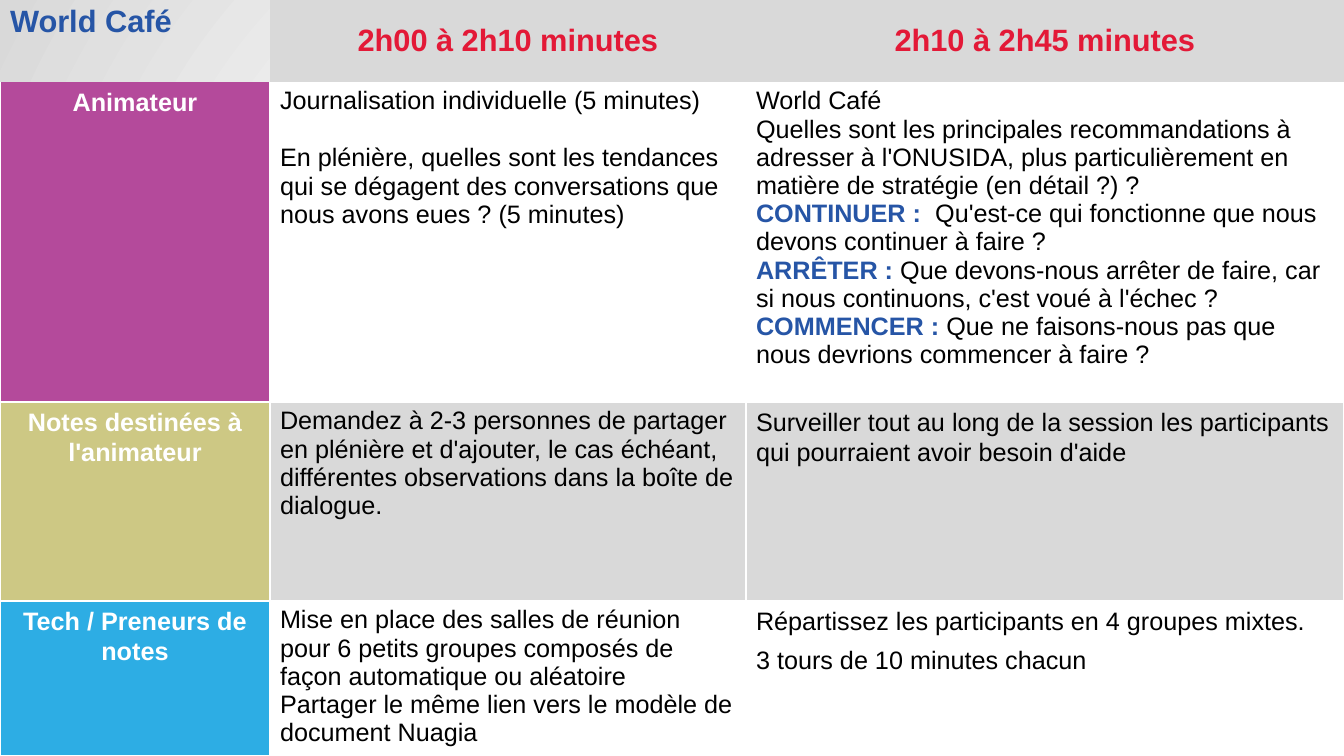
from dataclasses import dataclass

from lxml.etree import SubElement
from pptx import Presentation
from pptx.dml.color import RGBColor
from pptx.enum.text import MSO_ANCHOR, PP_ALIGN
from pptx.oxml import parse_xml
from pptx.oxml.ns import nsdecls, qn
from pptx.slide import Slide
from pptx.table import _Cell
from pptx.text.text import _Paragraph
from pptx.util import Emu, Pt


@dataclass(frozen=True)
class Theme:
    font: str = "Arial"
    heading_size: int = 22
    body_size: int = 18
    blue: str = "2655A6"
    red: str = "E31937"
    purple: str = "B44A9B"
    olive: str = "CDC884"
    sky: str = "2DADE4"
    grey: str = "D9D9D9"
    pale: str = "F2F2F2"
    white: str = "FFFFFF"
    black: str = "000000"


@dataclass(frozen=True)
class Passage:
    """A paragraph; text between asterisks is a highlighted keyword."""
    text: str
    line_spacing: float | None = None
    before: float = 0
    after: float = 0


@dataclass(frozen=True)
class AgendaRow:
    label: str
    label_fill: str
    body_fill: str
    columns: tuple[tuple[Passage, ...], ...]
    borders: tuple[str, ...] = ("lnL", "lnR", "lnT", "lnB")


THEME = Theme()
SLIDE_WIDTH, SLIDE_HEIGHT = 1344, 756
COLUMN_WIDTHS = (270, 476, 598)
ROW_HEIGHTS = (82, 320, 199, 155)
LOOSE = 1.07
NO_STYLE = "{2D5ABB26-0587-4C30-8999-92F81FD0307C}"

TITLE = "World Café"
TIME_SLOTS = ("2h00 à 2h10 minutes", "2h10 à 2h45 minutes")
AGENDA = (
    AgendaRow("Animateur", THEME.purple, THEME.white, (
        (Passage("Journalisation individuelle (5 minutes)"),
         Passage("En plénière, quelles sont les tendances qui se dégagent des conversations "
                 "que nous avons eues ? (5 minutes)", before=20.5)),
        (Passage("World Café"),
         Passage("Quelles sont les principales recommandations à adresser à l'ONUSIDA, "
                 "plus particulièrement en matière de stratégie (en détail ?) ?\n"
                 "*CONTINUER :  *Qu'est-ce qui fonctionne que nous devons continuer à faire ? \n"
                 "*ARRÊTER :* Que devons-nous arrêter de faire, car si nous continuons, "
                 "c'est voué à l'échec ? \n"
                 "*COMMENCER :* Que ne faisons-nous pas que nous devrions commencer à faire ?")),
    ), borders=("lnL", "lnR", "lnB")),
    AgendaRow("Notes destinées à l'animateur", THEME.olive, THEME.grey, (
        (Passage("Demandez à 2-3 personnes de partager en plénière et d'ajouter, le cas échéant, "
                 "différentes observations dans la boîte de dialogue."),),
        (Passage("Surveiller tout au long de la session les participants qui pourraient avoir "
                 "besoin d'aide", LOOSE),),
    )),
    AgendaRow("Tech / Preneurs de notes", THEME.sky, THEME.white, (
        (Passage("Mise en place des salles de réunion pour 6 petits groupes composés de façon "
                 "automatique ou aléatoire"),
         Passage("Partager le même lien vers le modèle de document Nuagia")),
        (Passage("Répartissez les participants en 4 groupes mixtes.", LOOSE, after=6),
         Passage("3 tours de 10 minutes chacun", LOOSE, after=6)),
    )),
)


def px(length: int) -> Emu:
    return Emu(round(length * 914400 / 100.8))


def add_run(paragraph: _Paragraph, text: str, *, size: int, color: str, bold: bool) -> None:
    run = paragraph.add_run()
    run.text = text
    run.font.name = THEME.font
    run.font.size = Pt(size)
    run.font.bold = bold
    run.font.color.rgb = RGBColor.from_string(color)


def write(cell: _Cell, passages: tuple[Passage, ...], *, size: int = THEME.body_size,
          color: str = THEME.black, bold: bool = False, align: PP_ALIGN = PP_ALIGN.LEFT,
          anchor: MSO_ANCHOR = MSO_ANCHOR.TOP) -> None:
    cell.vertical_anchor = anchor
    frame = cell.text_frame
    for index, passage in enumerate(passages):
        paragraph = frame.add_paragraph() if index else frame.paragraphs[0]
        paragraph.alignment = align
        paragraph.line_spacing = passage.line_spacing
        paragraph.space_before = Pt(passage.before)
        paragraph.space_after = Pt(passage.after)
        for line_number, line in enumerate(passage.text.split("\n")):
            if line_number:
                paragraph.add_line_break()
            for part_number, part in enumerate(line.split("*")):
                keyword = part_number % 2 == 1
                if part:
                    add_run(paragraph, part, size=size, bold=bold or keyword,
                            color=THEME.blue if keyword else color)


def paint(cell: _Cell, color: str, borders: tuple[str, ...] = ()) -> None:
    properties = cell._tc.get_or_add_tcPr()
    for tag in borders:
        line = SubElement(properties, qn(f"a:{tag}"), w=str(Pt(1)))
        fill = SubElement(line, qn("a:solidFill"))
        SubElement(fill, qn("a:srgbClr"), val=THEME.white)
    cell.fill.solid()
    cell.fill.fore_color.rgb = RGBColor.from_string(color)


def set_background(slide: Slide) -> None:
    slide.background.fill.solid()
    solid = slide.background._cSld.find(".//" + qn("a:solidFill"))
    stops = "".join(
        f'<a:gs pos="{percent * 1000}"><a:srgbClr val="{color}"/></a:gs>'
        for percent, color in ((0, THEME.white), (50, THEME.pale), (100, THEME.grey)))
    gradient = parse_xml(
        f'<a:gradFill {nsdecls("a")}><a:gsLst>{stops}</a:gsLst><a:path path="circle">'
        '<a:fillToRect l="50000" t="50000" r="50000" b="50000"/></a:path></a:gradFill>')
    solid.getparent().replace(solid, gradient)


def add_agenda(slide: Slide) -> None:
    frame = slide.shapes.add_table(len(ROW_HEIGHTS), len(COLUMN_WIDTHS), 0, 0,
                                   px(SLIDE_WIDTH), px(SLIDE_HEIGHT))
    table = frame.table
    table.horz_banding = False
    table._tbl.tblPr.find(qn("a:tableStyleId")).text = NO_STYLE
    for column, width in zip(table.columns, COLUMN_WIDTHS):
        column.width = px(width)
    for row, height in zip(table.rows, ROW_HEIGHTS):
        row.height = px(height)

    # Header: the title cell lets the background through
    title = table.cell(0, 0)
    title.fill.background()
    write(title, (Passage(TITLE),), size=THEME.heading_size, color=THEME.blue, bold=True)
    for column_number, slot in enumerate(TIME_SLOTS, start=1):
        cell = table.cell(0, column_number)
        paint(cell, THEME.grey)
        write(cell, (Passage(slot),), size=THEME.heading_size, color=THEME.red, bold=True,
              align=PP_ALIGN.CENTER, anchor=MSO_ANCHOR.MIDDLE)

    # One row per role
    for row_number, agenda_row in enumerate(AGENDA, start=1):
        label = table.cell(row_number, 0)
        paint(label, agenda_row.label_fill, agenda_row.borders)
        write(label, (Passage(agenda_row.label, LOOSE),), color=THEME.white, bold=True,
              align=PP_ALIGN.CENTER)
        for column_number, passages in enumerate(agenda_row.columns, start=1):
            cell = table.cell(row_number, column_number)
            paint(cell, agenda_row.body_fill, agenda_row.borders)
            write(cell, passages)


def main() -> None:
    presentation = Presentation()
    presentation.slide_width = px(SLIDE_WIDTH)
    presentation.slide_height = px(SLIDE_HEIGHT)
    slide = presentation.slides.add_slide(presentation.slide_layouts[6])
    set_background(slide)
    add_agenda(slide)
    presentation.save("out.pptx")


if __name__ == "__main__":
    main()
